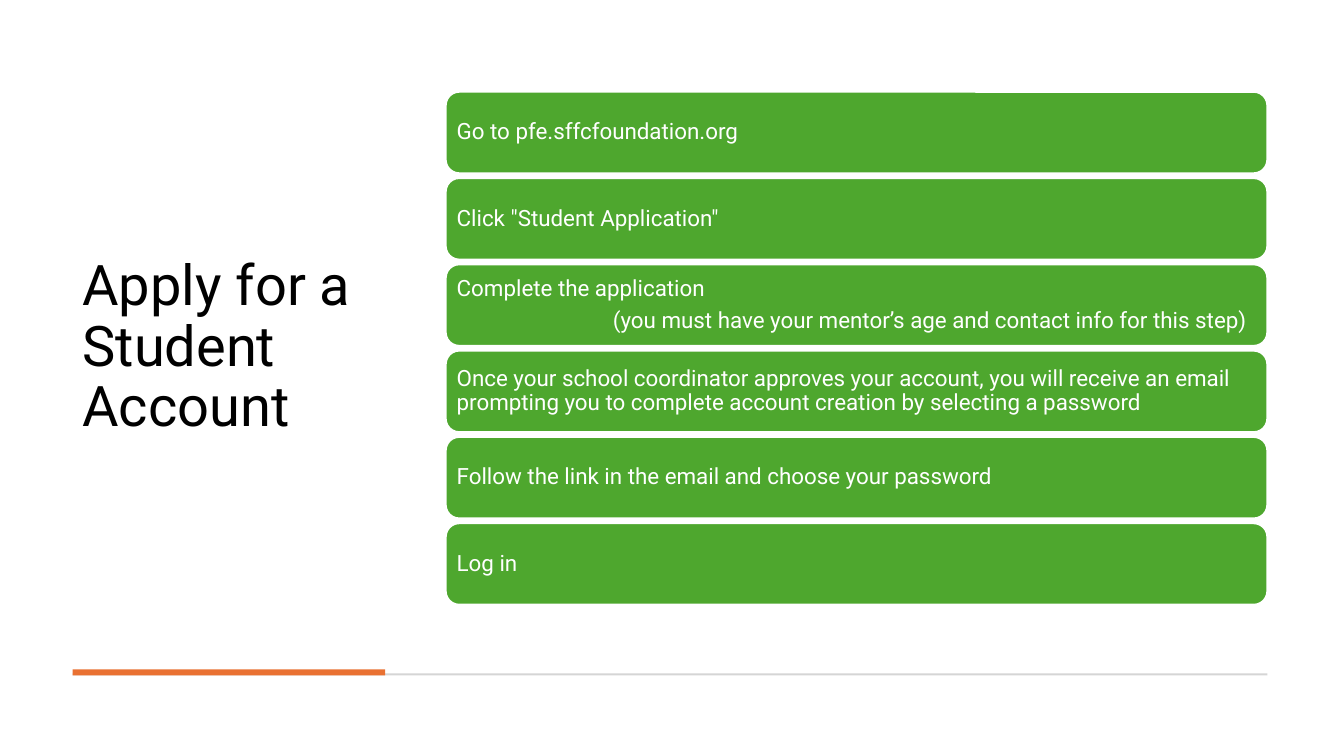
from dataclasses import dataclass

import pptx
import pptx.dml.color
import pptx.enum.shapes
import pptx.enum.text
import pptx.util

Inches = pptx.util.Inches
Pt = pptx.util.Pt
Kind = pptx.enum.shapes.MSO_SHAPE

FONT = "Roboto"
HUES = {
    "ink": "000000",
    "paper": "FFFFFF",
    "green": "4EA72E",
    "orange": "E97132",
    "gray": "D5D5D5",
}


@dataclass
class Box:
    left: float
    top: float
    width: float
    height: float


@dataclass
class Line:
    text: str
    indent: float = 0


STEPS = [
    [Line("Go to pfe.sffcfoundation.org")],
    [Line('Click "Student Application"')],
    [
        Line("Complete the application"),
        Line("(you must have your mentor’s age and contact info for this step)", 1.55),
    ],
    [Line("Once your school coordinator approves your account, you will receive "
          "an email prompting you to complete account creation by selecting a password")],
    [Line("Follow the link in the email and choose your password")],
    [Line("Log in")],
]
FIRST = Box(4.42, 0.91, 8.15, 0.81)
PITCH = 4.28 / (len(STEPS) - 1)


def color(name: str) -> pptx.dml.color.RGBColor:
    return pptx.dml.color.RGBColor.from_string(HUES[name])


def place(box: Box) -> list:
    return [Inches(n) for n in (box.left, box.top, box.width, box.height)]


def draw(slide, kind, box: Box, fill: str):
    shape = slide.shapes.add_shape(kind, *place(box))
    shape.shadow.inherit = False
    shape.fill.solid()
    shape.fill.fore_color.rgb = color(fill)
    shape.line.fill.background()
    return shape


def write(shape, lines: list[Line], size: float, hue: str, after: float = 0) -> None:
    frame = shape.text_frame
    frame.word_wrap = True
    frame.vertical_anchor = pptx.enum.text.MSO_ANCHOR.MIDDLE
    for i, line in enumerate(lines):
        para = frame.paragraphs[0] if i == 0 else frame.add_paragraph()
        para.alignment = pptx.enum.text.PP_ALIGN.LEFT
        para.line_spacing = 0.9
        para.space_after = Pt(after)
        if line.indent:
            para._p.get_or_add_pPr().set("marL", str(Inches(line.indent)))
        run = para.add_run()
        run.text = line.text
        run.font.name = FONT
        run.font.size = Pt(size)
        run.font.color.rgb = color(hue)


def main() -> None:
    deck = pptx.Presentation()
    deck.slide_width = Inches(13.33)
    deck.slide_height = Inches(7.5)
    slide = deck.slides.add_slide(deck.slide_layouts[6])

    # Title
    title = slide.shapes.add_textbox(*place(Box(0.72, 0.47, 3.1, 5.97)))
    write(title, [Line("Apply for a Student Account")], 40, "ink")

    # Footer rules
    draw(slide, Kind.RECTANGLE, Box(0.72, 6.68, 11.85, 0.02), "gray")
    draw(slide, Kind.RECTANGLE, Box(0.72, 6.64, 3.1, 0.06), "orange")

    # Step cards
    for i, lines in enumerate(STEPS):
        box = Box(FIRST.left, FIRST.top + i * PITCH, FIRST.width, FIRST.height)
        card = draw(slide, Kind.ROUNDED_RECTANGLE, box, "green")
        card.line.color.rgb = color("paper")
        card.line.width = Pt(1.5)
        frame = card.text_frame
        frame.margin_left = frame.margin_right = Inches(0.07)
        frame.margin_top = frame.margin_bottom = Inches(0.07)
        write(card, lines, 16, "paper", after=6)

    deck.save("out.pptx")


if __name__ == "__main__":
    main()
